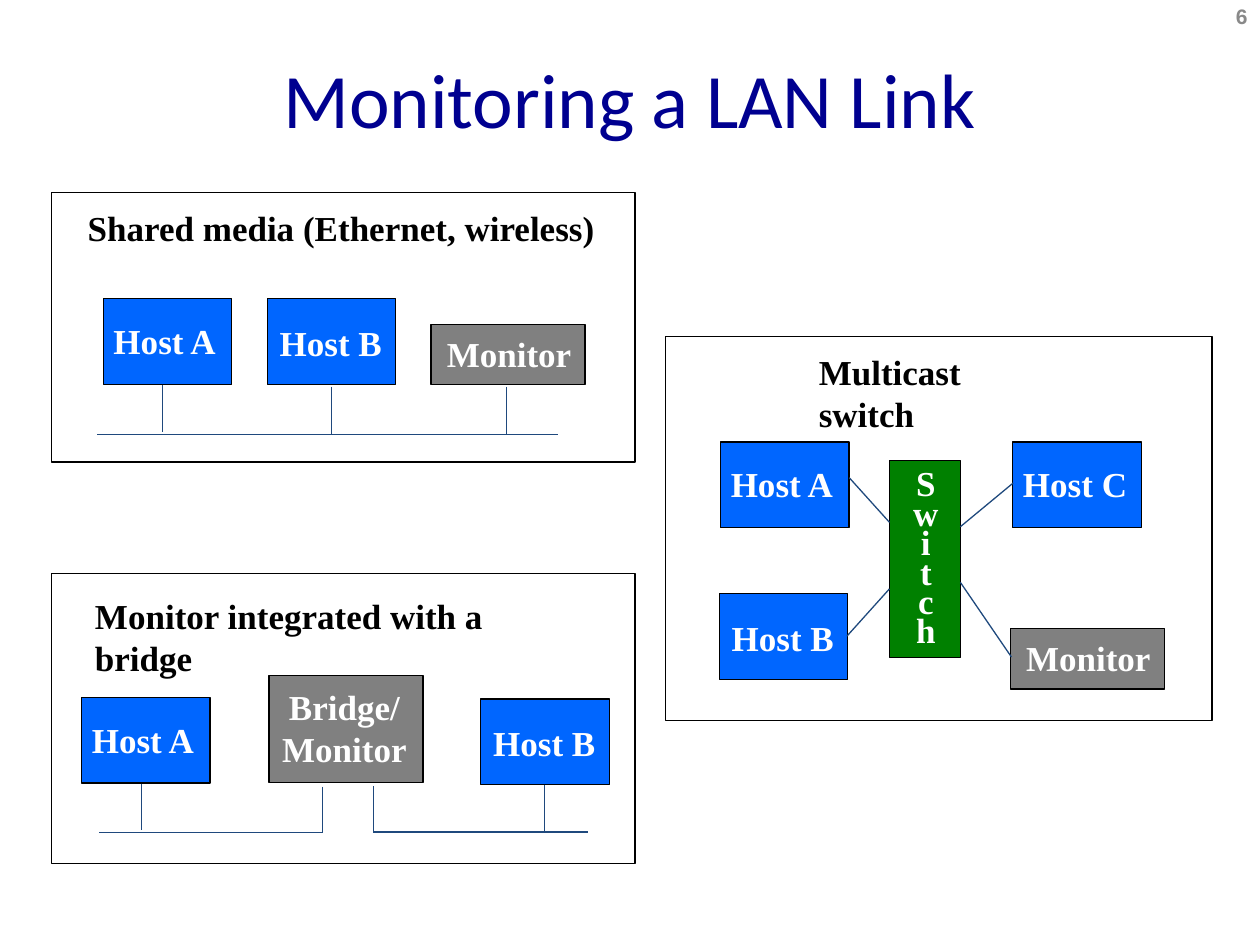
"""Build the slide that shows three ways of monitoring a LAN link."""
from lxml.etree import SubElement
from pptx import Presentation
from pptx.dml.color import RGBColor
from pptx.enum.shapes import MSO_CONNECTOR, MSO_SHAPE
from pptx.enum.text import MSO_ANCHOR, PP_ALIGN
from pptx.oxml.ns import qn
from pptx.util import Pt

color = RGBColor.from_string
BLUE, GRAY, GREEN = "0066FF", "808080", "008000"
HOST, MONITOR = (73.5, 49), (88, 34.5)

# node style: fill, box size, label box relative to the node, label lines
NODES = {
    "Host A": (BLUE, HOST, (-1.2, 8.3, 74.2, 31), ["Host A"]),
    "Host B": (BLUE, HOST, (0, 9.5, 73, 31), ["Host B"]),
    "Host C": (BLUE, HOST, (-1.2, 8.3, 74.2, 31), ["Host C"]),
    "Monitor": (GRAY, MONITOR, (1.8, 0.8, 85.7, 31), ["Monitor"]),
    "Bridge": (GRAY, (88, 61.3), (-3.4, 2, 92.9, 55.4), ["Bridge/", "Monitor"]),
    "Switch": (GREEN, (40.5, 112.5), (6.4, 3.6, 28.8, 108), list("Switch")),
}

PANELS = [
    {
        "frame": (29.5, 110.2, 333.4, 153.8),
        "heading": ("Shared media (Ethernet, wireless)", (43, 114.7, 304, 31)),
        "nodes": [("Host A", 59, 170.6), ("Host B", 152.7, 170.6), ("Monitor", 246.4, 185.4)],
        "wires": [(93, 220, 93, 247), (55.5, 248.2, 319, 248.2),
                  (189.4, 221, 189.4, 248), (289.3, 221, 289.3, 248)],
    },
    {
        "frame": (380.2, 192.3, 312.5, 219.6),
        "heading": ("Multicast switch", (460.8, 196.8, 148, 55)),
        "nodes": [("Host A", 411.7, 252.6), ("Host B", 411, 339.2), ("Host C", 578.7, 252.6),
                  ("Monitor", 577.4, 359.2), ("Switch", 508.3, 263.3)],
        "wires": [(485.3, 273, 508.3, 298.5), (484, 363.5, 508.3, 336.5),
                  (548.8, 301, 579, 276), (548.8, 332.8, 578, 375.5)],
    },
    {
        "frame": (29.5, 327.6, 333.4, 166),
        "heading": ("Monitor integrated with a bridge", (47.2, 336.4, 290, 55)),
        "nodes": [("Host A", 46.6, 398.5), ("Host B", 274.7, 399.4), ("Bridge", 153.8, 386)],
        "wires": [(80.8, 448, 80.8, 474.5), (56.6, 475.7, 184, 475.7), (311.3, 448.5, 311.3, 475.3),
                  (184.2, 449.5, 184.2, 476.3), (213.4, 449.2, 213.4, 476), (213.7, 475.4, 335.8, 475.4)],
    },
]


def add_box(shapes, bounds, fill=None):
    box = shapes.add_shape(MSO_SHAPE.RECTANGLE, *map(Pt, bounds))
    box.shadow.inherit = False
    box.line.color.rgb = color("000000")
    box.line.width = Pt(0.75)
    if fill:
        box.fill.solid()
        box.fill.fore_color.rgb = color(fill)
    else:
        box.fill.background()


def add_text(shapes, bounds, lines, ink, align=PP_ALIGN.LEFT, wrap=False,
             font="Times New Roman", size=20, spacing=None):
    frame = shapes.add_textbox(*map(Pt, bounds)).text_frame
    frame.word_wrap = wrap
    for index, line in enumerate(lines):
        paragraph = frame.add_paragraph() if index else frame.paragraphs[0]
        paragraph.alignment = align
        paragraph.line_spacing = spacing
        run = paragraph.add_run()
        run.text = line
        run.font.name = font
        run.font.size = Pt(size)
        run.font.bold = True
        run.font.color.rgb = color(ink)
    return frame


deck = Presentation()
deck.slide_width, deck.slide_height = Pt(720), Pt(540)
slide = deck.slides.add_slide(deck.slide_layouts[5])

title = slide.shapes.title
title.left, title.top, title.width, title.height = map(Pt, (36, 10.8, 648, 90))
title.text_frame.vertical_anchor = MSO_ANCHOR.MIDDLE
title_line = title.text_frame.paragraphs[0]
title_line.alignment = PP_ALIGN.CENTER
title_run = title_line.add_run()
title_run.text = "Monitoring a LAN Link"
title_run.font.name = "Calibri"
title_run.font.size = Pt(44)
title_run.font.color.rgb = color("000090")

for panel in PANELS:
    shapes = slide.shapes.add_group_shape().shapes
    add_box(shapes, panel["frame"])
    heading, heading_bounds = panel["heading"]
    add_text(shapes, heading_bounds, [heading], "000000", wrap=heading_bounds[3] > 31)

    for name, left, top in panel["nodes"]:
        fill, size, (dx, dy, width, height), lines = NODES[name]
        add_box(shapes, (left, top, *size), fill)
        add_text(shapes, (left + dx, top + dy, width, height), lines, "FFFFFF",
                 align=PP_ALIGN.CENTER if len(lines) > 1 else PP_ALIGN.LEFT,
                 wrap=name == "Bridge", spacing=0.7 if name == "Switch" else None)

    for ends in panel["wires"]:
        wire = shapes.add_connector(MSO_CONNECTOR.STRAIGHT, *map(Pt, ends))
        wire.line.color.rgb = color("1F497D")
        wire.line.width = Pt(0.75)
        SubElement(wire._element.spPr, qn("a:effectLst"))

page_number = add_text(slide.shapes, (552, -5, 168, 28.8), ["6"], "898989",
                       align=PP_ALIGN.RIGHT, wrap=True, font="Arial", size=12)
page_number.vertical_anchor = MSO_ANCHOR.MIDDLE

deck.save("out.pptx")
